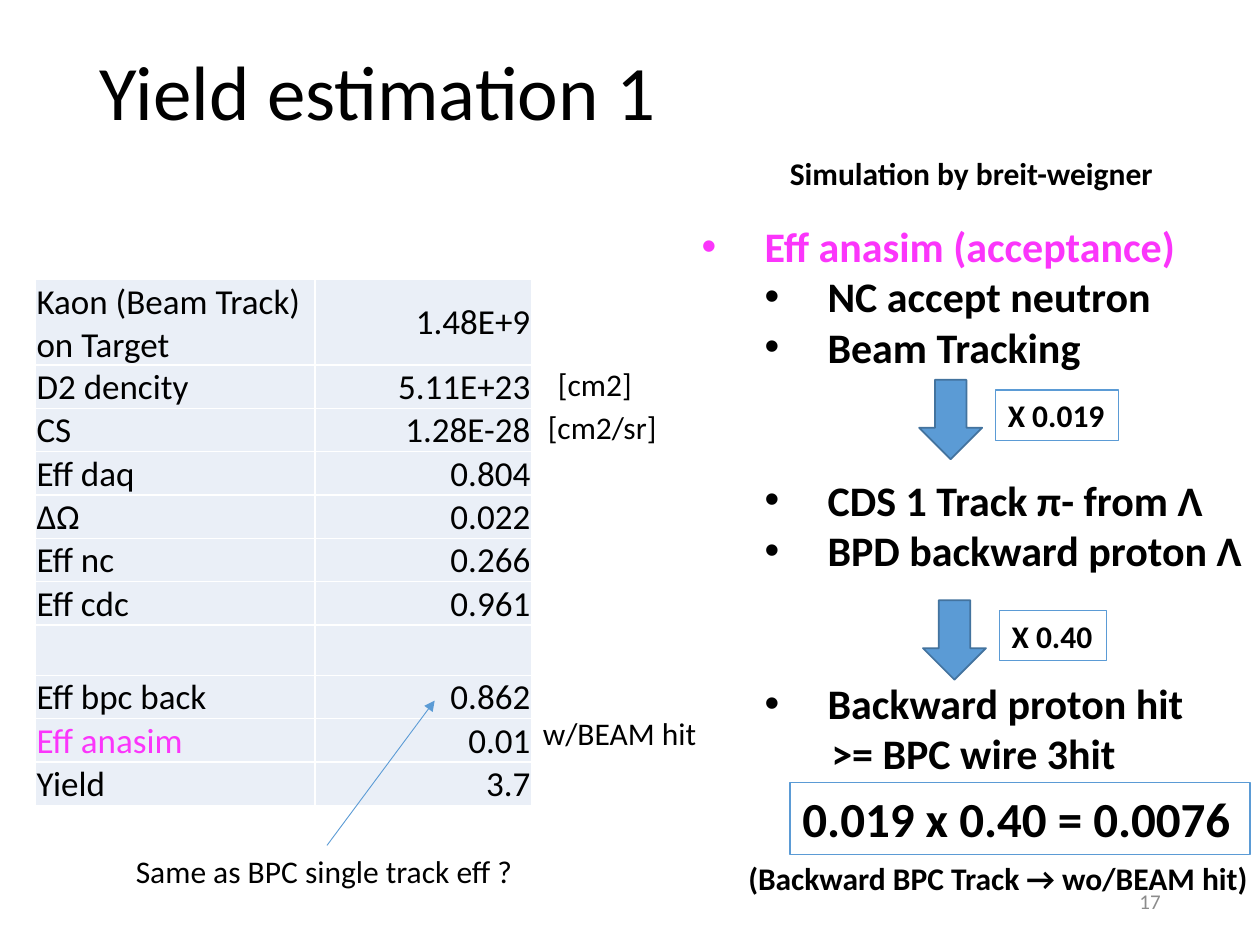
from dataclasses import dataclass

from lxml.etree import SubElement
from pptx import Presentation
from pptx.dml.color import RGBColor
from pptx.enum.shapes import MSO_CONNECTOR, MSO_SHAPE
from pptx.enum.text import MSO_ANCHOR, MSO_AUTO_SIZE, PP_ALIGN
from pptx.oxml.ns import qn
from pptx.util import Inches, Pt

COLUMNS, ROWS = 100, 75
CELL = Inches(0.1)


@dataclass(frozen=True)
class Theme:
    font: str = "Calibri"
    ink: str = "000000"
    accent: str = "FB35FB"
    blue: str = "5B9BD5"
    dark_blue: str = "43739E"
    cell: str = "EAEFF7"
    muted: str = "8C8C8C"
    title: int = 44
    result: int = 28
    outline: int = 24
    table: int = 20
    label: int = 18
    page: int = 12


THEME = Theme()


@dataclass(frozen=True)
class Box:
    """An area in columns and rows of the slide grid."""
    x: float
    y: float
    w: float
    h: float

    def inside(self, dx, dy, w, h):
        return Box(self.x + dx, self.y + dy, w, h)

    def emu(self):
        return [round(length * CELL) for length in (self.x, self.y, self.w, self.h)]


YIELD_ROWS = [
    ("Kaon (Beam Track) on Target", "1.48E+9"),
    ("D2 dencity", "5.11E+23"),
    ("CS", "1.28E-28"),
    ("Eff daq", "0.804"),
    ("ΔΩ", "0.022"),
    ("Eff nc", "0.266"),
    ("Eff cdc", "0.961"),
    ("", ""),
    ("Eff bpc back", "0.862"),
    ("Eff anasim", "0.01"),
    ("Yield", "3.7"),
]
STEP_GAP = 58.6  # two outline lines, left free for the arrow
# text, level, left margin in inches, bulleted, space before
OUTLINE = [
    ("Eff anasim (acceptance)", 0, 0.5, True, 0),
    ("NC accept neutron", 1, 1, True, 0),
    ("Beam Tracking", 1, 1, True, 0),
    ("CDS 1 Track π- from Λ", 1, 1, True, STEP_GAP),
    ("BPD backward proton Λ", 1, 1, True, 0),
    ("Backward proton hit", 1, 1, True, STEP_GAP),
    (">= BPC wire 3hit", 1, 1.03, False, 0),
]


def rgb(color):
    return RGBColor.from_string(color)


def add_run(paragraph, text, size, color=THEME.ink, bold=False, align=PP_ALIGN.LEFT):
    paragraph.alignment = align
    run = paragraph.add_run()
    run.text = text
    run.font.name, run.font.size, run.font.bold = THEME.font, Pt(size), bold
    run.font.color.rgb = rgb(color)


def add_textbox(slide, box, anchor=MSO_ANCHOR.TOP):
    textbox = slide.shapes.add_textbox(*box.emu())
    textbox.text_frame.word_wrap = True
    textbox.text_frame.vertical_anchor = anchor
    return textbox


def fit_line(shape, text, size, bold):
    """Put one unwrapped line in a shape that grows with it."""
    frame = shape.text_frame
    frame.word_wrap = False
    frame.auto_size = MSO_AUTO_SIZE.SHAPE_TO_FIT_TEXT
    frame.vertical_anchor = MSO_ANCHOR.TOP
    add_run(frame.paragraphs[0], text, size, bold=bold)


def add_label(slide, box, text, bold=False):
    label = add_textbox(slide, box)
    fit_line(label, text, THEME.label, bold)
    return label


def add_framed_line(slide, box, text, size):
    rectangle = slide.shapes.add_shape(MSO_SHAPE.RECTANGLE, *box.emu())
    rectangle.shadow.inherit = False
    rectangle.fill.background()
    rectangle.line.color.rgb = rgb(THEME.blue)
    rectangle.line.width = Pt(0.75)
    fit_line(rectangle, text, size, True)


def set_bullet(paragraph, margin, bulleted):
    properties = paragraph._p.get_or_add_pPr()
    properties.set("marL", str(Inches(margin)))
    properties.set("indent", str(Inches(-0.5 if bulleted else 0)))
    if bulleted:
        SubElement(properties, qn("a:buFont")).set("typeface", "Arial")
        SubElement(properties, qn("a:buChar")).set("char", "•")
    else:
        SubElement(properties, qn("a:buNone"))


def add_title(slide, box):
    heading = add_textbox(slide, box, MSO_ANCHOR.MIDDLE).text_frame.paragraphs[0]
    heading.line_spacing = 0.9
    add_run(heading, "Yield estimation 1", THEME.title)


def add_yield_table(slide, box):
    frame = slide.shapes.add_table(len(YIELD_ROWS), 2, *box.emu())
    table = frame.table
    table.first_row = table.horz_banding = False
    for column, width in zip(table.columns, (22.2, 17.2)):
        column.width = round(width * CELL)
    for row, texts in zip(table.rows, YIELD_ROWS):
        row.height = round(2.8 * CELL)
        for cell, text, align in zip(row.cells, texts, (PP_ALIGN.LEFT, PP_ALIGN.RIGHT)):
            cell.fill.solid()
            cell.fill.fore_color.rgb = rgb(THEME.cell)
            if text:
                cell.vertical_anchor = MSO_ANCHOR.MIDDLE
                cell.margin_left = cell.margin_right = cell.margin_top = Inches(0.01)
                cell.margin_bottom = 0
                color = THEME.accent if text == "Eff anasim" else THEME.ink
                add_run(cell.text_frame.paragraphs[0], text, THEME.table, color, align=align)
    frame.height = box.emu()[3]


def add_pointer(slide, source, tip):
    """Draw an arrow from the top of a note to a grid point."""
    x, y = tip.emu()[:2]
    pointer = slide.shapes.add_connector(MSO_CONNECTOR.STRAIGHT, x, y, x, y)
    pointer.begin_connect(source, 0)
    pointer.line.color.rgb = rgb(THEME.blue)
    pointer.line.width = Pt(0.5)
    SubElement(pointer.line._get_or_add_ln(), qn("a:tailEnd")).set("type", "triangle")
    SubElement(pointer._element.spPr, qn("a:effectLst"))


def add_yield_region(slide, box):
    add_yield_table(slide, box.inside(0, 0, 39.4, 41.1))
    add_label(slide, box.inside(40.5, 6.3, 7.9, 4), "[cm2]")
    add_label(slide, box.inside(39.7, 9.7, 10.7, 4), "[cm2/sr]")
    add_label(slide, box.inside(39.3, 34, 14.3, 4), "w/BEAM hit")
    note = add_label(slide, box.inside(7, 44.9, 32.3, 4), "Same as BPC single track eff ?")
    add_pointer(slide, note, box.inside(31.7, 33.4, 0, 0))


def add_outline(slide, box):
    frame = add_textbox(slide, box).text_frame
    for index, (text, level, margin, bulleted, gap) in enumerate(OUTLINE):
        paragraph = frame.add_paragraph() if index else frame.paragraphs[0]
        paragraph.level = level
        paragraph.space_before = Pt(gap)
        set_bullet(paragraph, margin, bulleted)
        color = THEME.ink if level else THEME.accent
        add_run(paragraph, text, THEME.outline, color, True)


def add_step(slide, box, factor, factor_width):
    arrow = slide.shapes.add_shape(MSO_SHAPE.RIGHT_ARROW, *box.emu())
    arrow.rotation = 90
    arrow.shadow.inherit = False
    arrow.fill.solid()
    arrow.fill.fore_color.rgb = rgb(THEME.blue)
    arrow.line.color.rgb = rgb(THEME.dark_blue)
    arrow.line.width = Pt(1)
    add_framed_line(slide, box.inside(6.7, 0.15, factor_width, 4), factor, THEME.label)


def add_simulation_region(slide, box):
    add_label(slide, box.inside(7, 0, 31.5, 4), "Simulation by breit-weigner", True)
    add_outline(slide, box.inside(0, 5.3, box.w, 49.5))
    add_step(slide, box.inside(17.6, 19.1, 6.3, 5), "X 0.019", 9.8)
    add_step(slide, box.inside(17.9, 36.6, 6.3, 5), "X 0.40", 8.5)
    add_framed_line(slide, box.inside(8, 50.4, 36.5, 5.7), "0.019 x 0.40 = 0.0076", THEME.result)
    add_label(slide, box.inside(3.7, 56, 42.2, 4), "(Backward BPC Track → wo/BEAM hit)", True)


def add_page_number(slide, box):
    number = add_textbox(slide, box, MSO_ANCHOR.MIDDLE).text_frame.paragraphs[0]
    add_run(number, "17", THEME.page, THEME.muted, align=PP_ALIGN.RIGHT)


def main():
    deck = Presentation()
    deck.slide_width, deck.slide_height = COLUMNS * CELL, ROWS * CELL
    slide = deck.slides.add_slide(deck.slide_layouts[6])
    add_title(slide, Box(6.9, 0.3, 86.2, 14.5))
    add_yield_region(slide, Box(2.8, 22.2, 53.6, 48.9))
    add_simulation_region(slide, Box(54.7, 11.7, 45.3, 60))
    add_page_number(slide, Box(70.6, 69.5, 22.5, 4))
    deck.save("out.pptx")


if __name__ == "__main__":
    main()
